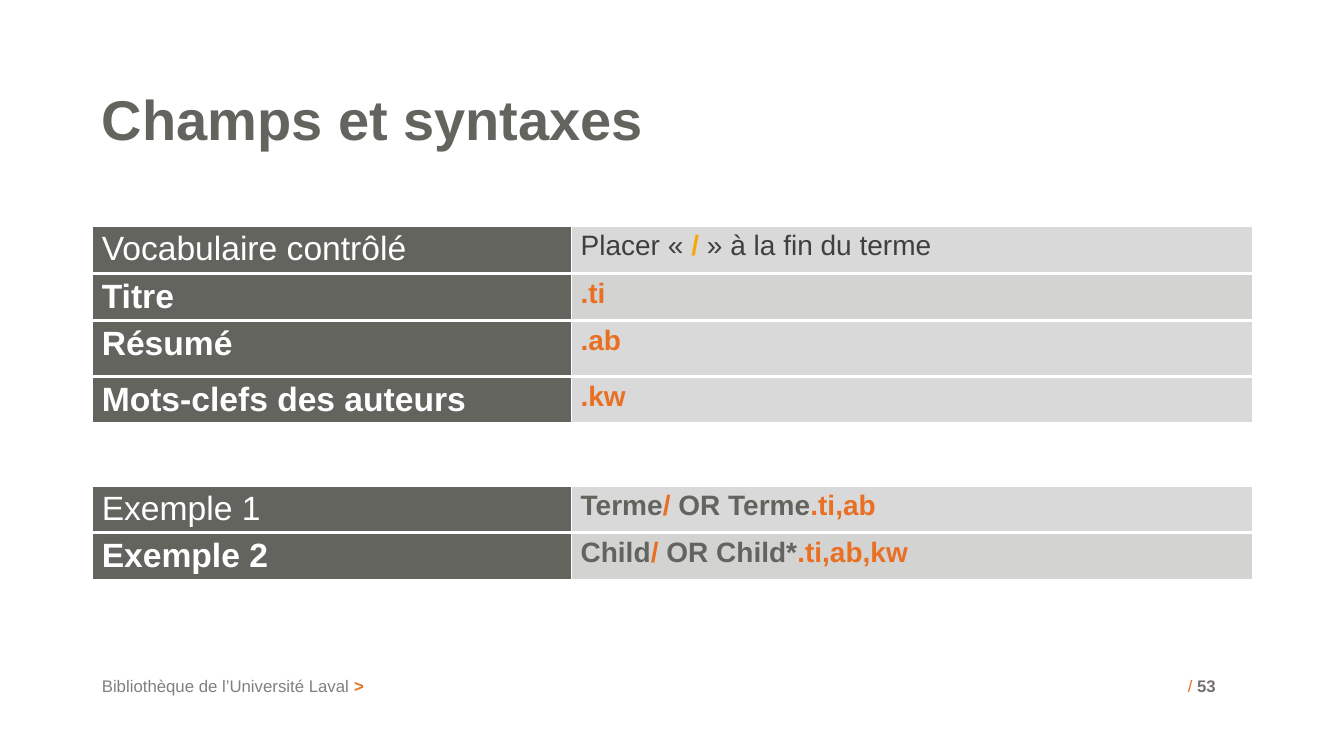
import pptx
import pptx.util
import pptx.dml.color
import pptx.enum.text
import pptx.oxml

theme = {
    "font": "Arial", "slate": "64645F", "white": "FFFFFF", "light": "D9D9D9",
    "mid": "D3D3D2", "dark": "3F3F3F", "amber": "F7A90B", "orange": "E96F23",
    "gray": "808080", "page": "767171",
    "title": 40, "label": 24, "code": 20, "foot": 12,
}

deck = pptx.Presentation()
deck.slide_width = pptx.util.Inches(13.33)
deck.slide_height = pptx.util.Inches(7.5)
wide, high = deck.slide_width, deck.slide_height
slide = deck.slides.add_slide(deck.slide_layouts[5])

# Grid as shares of the slide
left, span = int(wide * 0.069), int(wide * 0.8627)
split = (0.413, 0.587)
side, edge = pptx.util.Inches(0.09), pptx.util.Inches(0.045)


def write(par, text, size="code", color="slate", bold=False):
    run = par.add_run()
    run.text = text
    run.font.name = theme["font"]
    run.font.size = pptx.util.Pt(theme[size])
    run.font.bold = bold
    run.font.color.rgb = pptx.dml.color.RGBColor.from_string(theme[color])


def frame(box):
    text = box.text_frame
    text.word_wrap = True
    text.auto_size = pptx.enum.text.MSO_AUTO_SIZE.NONE
    text.vertical_anchor = pptx.enum.text.MSO_ANCHOR.TOP
    text.margin_left = text.margin_right = side
    text.margin_top = text.margin_bottom = edge
    par = text.paragraphs[0]
    par.alignment = pptx.enum.text.PP_ALIGN.LEFT
    return par


# Title
title = slide.shapes.title
title.left, title.top = left, int(high * 0.116)
title.width, title.height = span, int(high * 0.157)
par = frame(title)
par.line_spacing = 0.9
write(par, "Champs et syntaxes", size="title", bold=True)

# Footer and page number: left, width, runs of text, color, bold
feet = [
    (0.069, 0.797, [("Bibliothèque de l’Université Laval ", "gray", False),
                    (">", "orange", True)]),
    (0.877, 0.054, [("/ ", "orange", False), ("53", "page", True)]),
]
for start, share, parts in feet:
    box = slide.shapes.add_textbox(int(wide * start), int(high * 0.888),
                                   int(wide * share), int(high * 0.053))
    par = frame(box)
    for text, color, bold in parts:
        write(par, text, size="foot", color=color, bold=bold)

# Tables: top, then rows of height, label, runs, fill
fields = [
    (0.47, "Vocabulaire contrôlé",
     [("Placer « ", "dark", False), ("/ ", "amber", True),
      ("» à la fin du terme", "dark", False)], "light"),
    (0.47, "Titre", [(".ti", "orange", True)], "mid"),
    (0.55, "Résumé", [(".ab", "orange", True)], "light"),
    (0.47, "Mots-clefs des auteurs", [(".kw", "orange", True)], "light"),
]
samples = [
    (0.47, "Exemple 1",
     [("Terme", "slate", True), ("/", "orange", True),
      (" OR Terme", "slate", True), (".ti,ab", "orange", True)], "light"),
    (0.47, "Exemple 2",
     [("Child", "slate", True), ("/", "orange", True),
      (" OR Child*", "slate", True), (".ti,ab,kw", "orange", True)], "mid"),
]
rules = {"lnL": 1, "lnR": 1, "lnT": 2.25, "lnB": 2.25}
space = "http://schemas.openxmlformats.org/drawingml/2006/main"

for top, rows in [(0.299, fields), (0.642, samples)]:
    tall = pptx.util.Inches(sum(row[0] for row in rows))
    table = slide.shapes.add_table(len(rows), 2, left, int(high * top),
                                   span, tall).table
    for col, share in zip(table.columns, split):
        col.width = int(span * share)
    for place, (height, label, parts, fill) in enumerate(rows):
        table.rows[place].height = pptx.util.Inches(height)
        cells = [
            ([(label, "white", place > 0)], "label", "slate"),
            (parts, "code", fill),
        ]
        for col, (runs, size, back) in enumerate(cells):
            cell = table.cell(place, col)
            cell.margin_left = cell.margin_right = side
            cell.margin_top = cell.margin_bottom = edge
            # White cell rules come ahead of the fill
            for tag, width in rules.items():
                cell._tc.get_or_add_tcPr().append(pptx.oxml.parse_xml(
                    f'<a:{tag} xmlns:a="{space}" w="{pptx.util.Pt(width)}">'
                    f'<a:solidFill><a:srgbClr val="{theme["white"]}"/>'
                    f'</a:solidFill></a:{tag}>'))
            cell.fill.solid()
            cell.fill.fore_color.rgb = (
                pptx.dml.color.RGBColor.from_string(theme[back]))
            par = cell.text_frame.paragraphs[0]
            for text, color, bold in runs:
                write(par, text, size=size, color=color, bold=bold)

deck.save("out.pptx")
